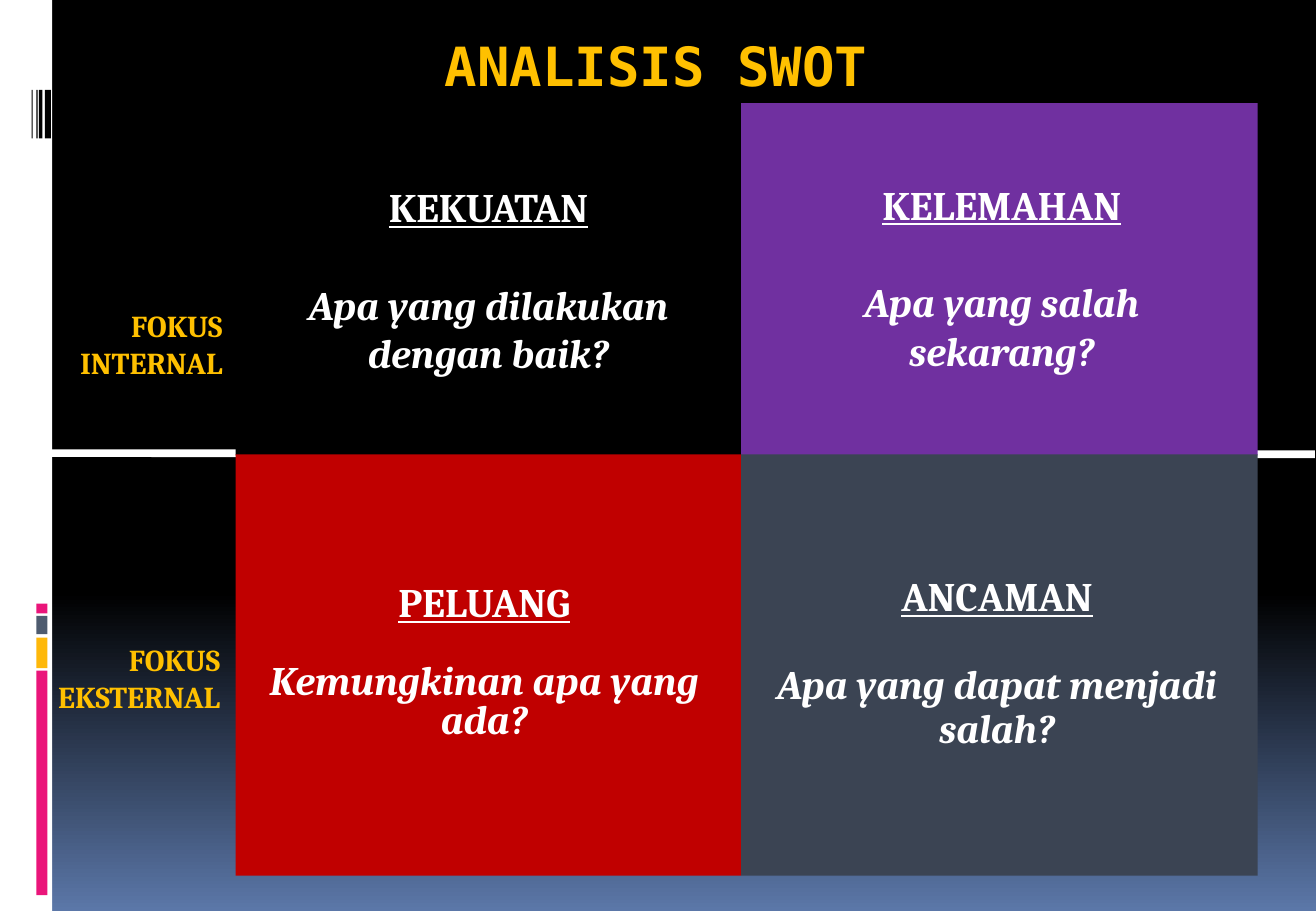
import copy

import pptx
import pptx.dml.color
import pptx.enum.shapes
import pptx.enum.text
import pptx.oxml
import pptx.oxml.ns
import pptx.util

Inches = pptx.util.Inches
Pt = pptx.util.Pt
qn = pptx.oxml.ns.qn
ALIGN = pptx.enum.text.PP_ALIGN
ANCHOR = pptx.enum.text.MSO_ANCHOR

WHITE, BLACK, GOLD, PINK = "FFFFFF", "000000", "FFC000", "EA157A"
LINE_PITCH = 29  # points taken by one 24 pt line


def rgb(value):
    return pptx.dml.color.RGBColor.from_string(value)


def add_text(p, text, size=24, font="Cambria", color=WHITE, bold=True,
             italic=False, underline=False, align=ALIGN.CENTER,
             spacing=None, before=0):
    p.alignment = align
    p.space_before = Pt(before)
    if spacing:
        p.line_spacing = spacing
    r = p.add_run()
    r.text = text
    f = r.font
    f.name, f.size, f.bold = font, Pt(size), bold
    f.italic, f.underline = italic, underline
    f.color.rgb = rgb(color)


class Deck:
    def __init__(self, width, height):
        self.prs = pptx.Presentation()
        self.prs.slide_width = Inches(width)
        self.prs.slide_height = Inches(height)
        self.s = self.prs.slides.add_slide(self.prs.slide_layouts[6])

    def background(self, stops):
        fill = self.s.background.fill
        fill.gradient()
        fill.gradient_angle = 270
        gs_list = self.s.element.find(".//" + qn("a:gsLst"))
        while len(gs_list) < len(stops):
            gs_list.append(copy.deepcopy(gs_list[0]))
        for stop, (position, color) in zip(fill.gradient_stops, stops):
            stop.position = position
            stop.color.rgb = rgb(color)

    def rect(self, left, top, width, height, color):
        sp = self.s.shapes.add_shape(
            pptx.enum.shapes.MSO_SHAPE.RECTANGLE,
            Inches(left), Inches(top), Inches(width), Inches(height))
        sp.shadow.inherit = False
        sp.fill.solid()
        sp.fill.fore_color.rgb = rgb(color)
        sp.line.fill.background()

    def line(self, x1, y1, x2, y2, color, width):
        sp = self.s.shapes.add_connector(
            pptx.enum.shapes.MSO_CONNECTOR.STRAIGHT,
            Inches(x1), Inches(y1), Inches(x2), Inches(y2))
        sp.line.color.rgb = rgb(color)
        sp.line.width = Pt(width)
        sp.element.spPr.append(pptx.oxml.parse_xml(
            '<a:effectLst xmlns:a='
            '"http://schemas.openxmlformats.org/drawingml/2006/main"/>'))

    def text(self, left, top, width, height, paragraphs, anchor=ANCHOR.TOP):
        sp = self.s.shapes.add_textbox(
            Inches(left), Inches(top), Inches(width), Inches(height))
        tf = sp.text_frame
        tf.word_wrap = True
        tf.vertical_anchor = anchor
        for i, (text, style) in enumerate(paragraphs):
            p = tf.add_paragraph() if i else tf.paragraphs[0]
            add_text(p, text, **style)

    def quadrant(self, box, color, text_box, heading, question, spacing):
        self.rect(*box, color)
        self.text(*text_box, [
            (heading, dict(underline=True, spacing=spacing)),
            (question, dict(italic=True, spacing=spacing,
                            before=LINE_PITCH * spacing)),
        ])


def main():
    deck = Deck(10.83, 7.5)
    deck.background([(0, BLACK), (0.65, BLACK), (1, "5B77A8")])

    # Side strip with thin black bars and coloured blocks
    deck.rect(0, 0, 0.43, 7.5, WHITE)
    for left, width in [(0.37, 0.05), (0.32, 0.03), (0.3, 0.01), (0.26, 0.01)]:
        deck.rect(left, 0.74, width, 0.4, BLACK)
    for top, height, color in [(5.52, 1.85, PINK), (5.25, 0.25, "FEB80A"),
                               (5.07, 0.15, "4E5B6F"), (4.97, 0.08, PINK)]:
        deck.rect(0.3, top, 0.09, height, color)

    # Divider between internal and external focus
    deck.line(0, 3.73, 10.82, 3.74, WHITE, 4.5)

    # Title and row labels
    deck.text(0.9, 0.1, 9, 0.75, [
        ("ANALISIS SWOT",
         dict(size=32, font="DejaVu Sans Mono", color=GOLD))], ANCHOR.BOTTOM)
    label = dict(size=18, color=GOLD, align=ALIGN.RIGHT)
    deck.text(0.18, 2.48, 1.75, 0.71, [("FOKUS INTERNAL", label)])
    deck.text(-0.08, 5.23, 1.99, 0.71, [("FOKUS EKSTERNAL", label)])

    # SWOT quadrants
    left, middle, top, center = 1.94, 6.1, 0.85, 3.74
    left_width, right_width, top_height, low_height = 4.16, 4.25, 2.9, 3.47
    deck.quadrant((left, top, left_width, top_height), BLACK,
                  (2.03, 1.45, 3.98, 1.72),
                  "KEKUATAN", "Apa yang dilakukan dengan baik?", 1.0)
    deck.quadrant((middle, top, right_width, top_height), "7030A0",
                  (6.33, 1.43, 3.83, 1.72),
                  "KELEMAHAN", "Apa yang salah sekarang?", 1.0)
    deck.quadrant((left, center, left_width, low_height), "C00000",
                  (1.9, 4.78, 4.17, 1.39),
                  "PELUANG", "Kemungkinan apa yang ada?", 0.8)
    deck.quadrant((middle, center, right_width, low_height), "3B4453",
                  (6.04, 4.7, 4.33, 1.56),
                  "ANCAMAN", "Apa yang dapat menjadi salah?", 0.9)

    deck.prs.save("out.pptx")


if __name__ == "__main__":
    main()
